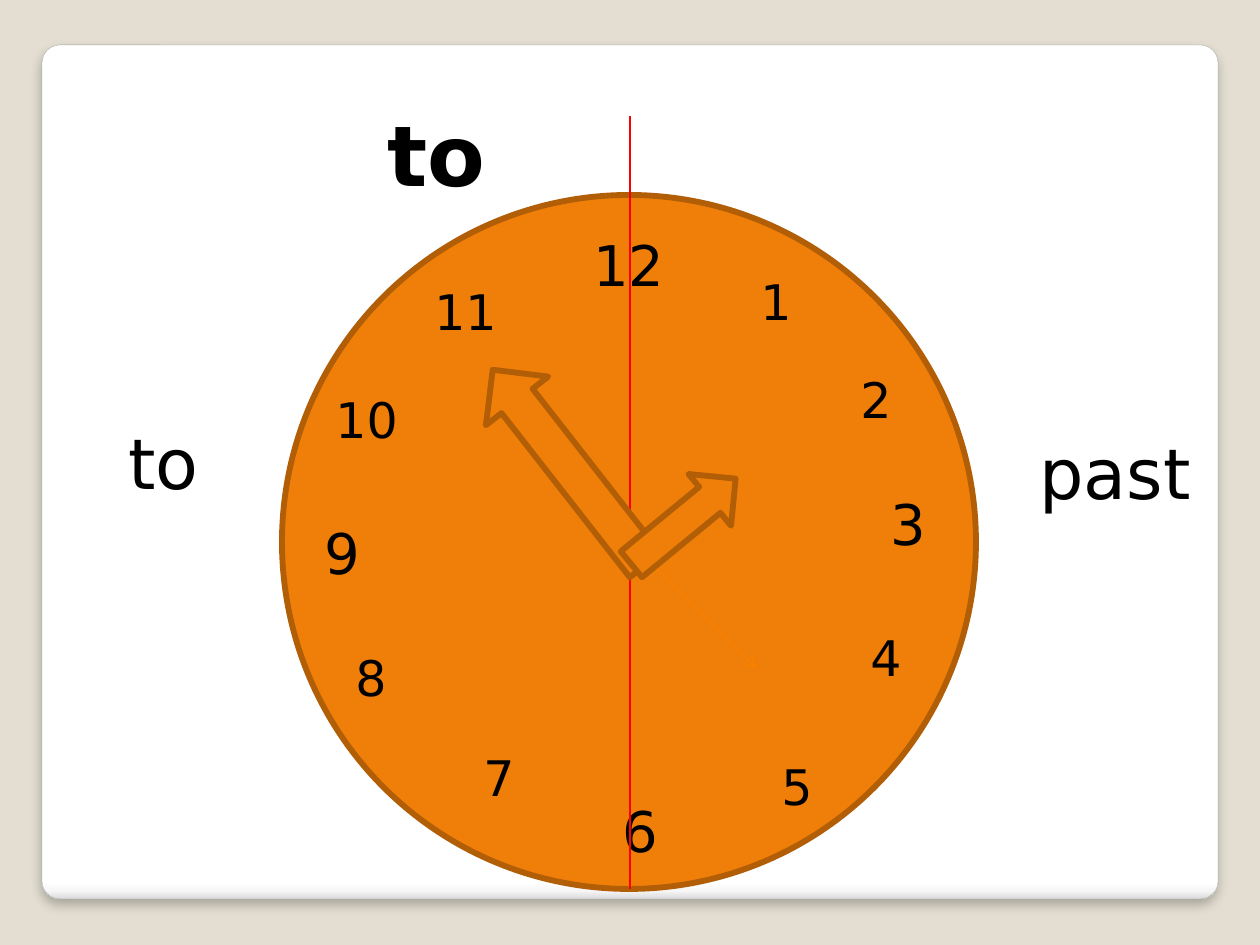
from lxml import etree
from pptx import Presentation
from pptx.dml.color import RGBColor
from pptx.enum.shapes import MSO_CONNECTOR, MSO_SHAPE
from pptx.enum.text import MSO_AUTO_SIZE, PP_ALIGN
from pptx.oxml.ns import qn
from pptx.util import Pt

LEFT, CENTER = PP_ALIGN.LEFT, PP_ALIGN.CENTER
GROW = MSO_AUTO_SIZE.SHAPE_TO_FIT_TEXT
STRAIGHT = MSO_CONNECTOR.STRAIGHT
CARD, DIAL = MSO_SHAPE.ROUNDED_RECTANGLE, MSO_SHAPE.OVAL
RIGHT_ARROW, LEFT_ARROW = MSO_SHAPE.RIGHT_ARROW, MSO_SHAPE.LEFT_ARROW

FONT = "DejaVu Sans"
ORANGE, BROWN, RED, THIN_ORANGE = "F07F09", "B25E07", "FF0000", "F97F00"

# number: left, top, width (inside the dial), text size
NUMBERS = {
    12: (299, 29, 100, 32), 1: (466, 70, 129, 28), 2: (566, 168, 59, 28),
    3: (596, 288, 69, 32), 4: (576, 426, 69, 28), 5: (487, 555, 59, 28),
    6: (328, 595, 79, 32), 7: (189, 546, 118, 28), 8: (61, 446, 89, 28),
    9: (30, 317, 110, 32), 10: (41, 188, 110, 28), 11: (140, 80, 100, 28),
}


def px(length):
    return round(length * 914400 / 126)


def rgb(value):
    return RGBColor.from_string(value)


def add_text(slide, text, left, top, width, height, size=28, bold=False, align=LEFT):
    frame = slide.shapes.add_textbox(px(left), px(top), px(width), px(height)).text_frame
    frame.word_wrap = True
    frame.auto_size = GROW
    paragraph = frame.paragraphs[0]
    paragraph.alignment = align
    run = paragraph.add_run()
    run.text = text
    run.font.name, run.font.size, run.font.bold = FONT, Pt(size), bold
    run.font.color.rgb = rgb("000000")


def add_figure(slide, preset, left, top, width, height,
               fill=ORANGE, line=BROWN, weight=3.35, rotation=0):
    figure = slide.shapes.add_shape(preset, px(left), px(top), px(width), px(height))
    figure.shadow.inherit = False
    figure.fill.solid()
    figure.fill.fore_color.rgb = rgb(fill)
    figure.line.color.rgb = rgb(line)
    figure.line.width = Pt(weight)
    figure.rotation = rotation
    return figure


def add_line(slide, x1, y1, x2, y2, color=THIN_ORANGE, arrow=False):
    line = slide.shapes.add_connector(STRAIGHT, px(x1), px(y1), px(x2), px(y2))
    line.line.color.rgb = rgb(color)
    line.line.width = Pt(0.75)
    if arrow:
        etree.SubElement(line.line._ln, qn("a:tailEnd"), type="arrow")
    etree.SubElement(line._element.spPr, qn("a:effectLst"))


def add_color(parent, value):
    return etree.SubElement(parent, qn("a:srgbClr"), val=value)


def draw_card(slide, left, top, width, height):
    card = add_figure(slide, CARD, left, top, width, height, "FFFFFF", "A4A4A4", 0.16)
    card.adjustments[0] = 0.021
    properties = card._element.spPr

    # Vertical gradient that darkens at the bottom edge
    card.fill.gradient()
    card.fill.gradient_angle = 270
    stops = properties.find(qn("a:gradFill")).find(qn("a:gsLst"))
    for stop in list(stops):
        stops.remove(stop)
    for percent, value in ((0, "FFFFFF"), (98, "FFFFFF"), (99, "F7F7F7"), (100, "DADADA")):
        add_color(etree.SubElement(stops, qn("a:gs"), pos=str(percent * 1000)), value)

    # Soft shadow below
    shadow = etree.SubElement(properties.find(qn("a:effectLst")), qn("a:outerShdw"),
                              blurRad=str(Pt(6)), dist=str(Pt(4)), dir="5400000",
                              algn="tl", rotWithShape="0")
    etree.SubElement(add_color(shadow, "000000"), qn("a:alpha"), val="25000")


def draw_clock(slide, left, top, size):
    middle = left + 348
    bottom = top + size
    add_figure(slide, DIAL, left, top, size, size)

    for number, (x, y, width, points) in NUMBERS.items():
        add_text(slide, str(number), left + x, top + y, width,
                 81 if points == 32 else 72, size=points)

    # Divider between the two halves
    for arrow in (False, True):
        add_line(slide, middle, top, middle, bottom, arrow=arrow)
    add_line(slide, middle, top, middle, top - 50)
    add_line(slide, middle, top - 79, middle, bottom, RED)

    # Hands
    add_line(slide, middle, top + 347, middle + 126, top + 473, arrow=True)
    add_figure(slide, RIGHT_ARROW, left + 163, top + 233, 248, 79, rotation=232)
    add_figure(slide, LEFT_ARROW, left + 334, top + 293, 135, 67, rotation=140.6)


def draw_labels(slide, left, top):
    add_text(slide, "past", left + 985, top + 378, 198, 97, size=40)
    add_text(slide, "to", left + 32, top + 368, 179, 97, size=40, align=CENTER)
    add_text(slide, "to", left + 191, top + 51, 407, 115, size=48, bold=True, align=CENTER)


def main():
    deck = Presentation()
    deck.slide_width, deck.slide_height = px(1260), px(945)
    slide = deck.slides.add_slide(deck.slide_layouts[6])
    slide.background.fill.solid()
    slide.background.fill.fore_color.rgb = rgb("E3DED1")
    draw_card(slide, 42, 45, 1176, 854)
    draw_clock(slide, 282, 195, 694)
    draw_labels(slide, 42, 45)
    deck.save("out.pptx")


if __name__ == "__main__":
    main()
